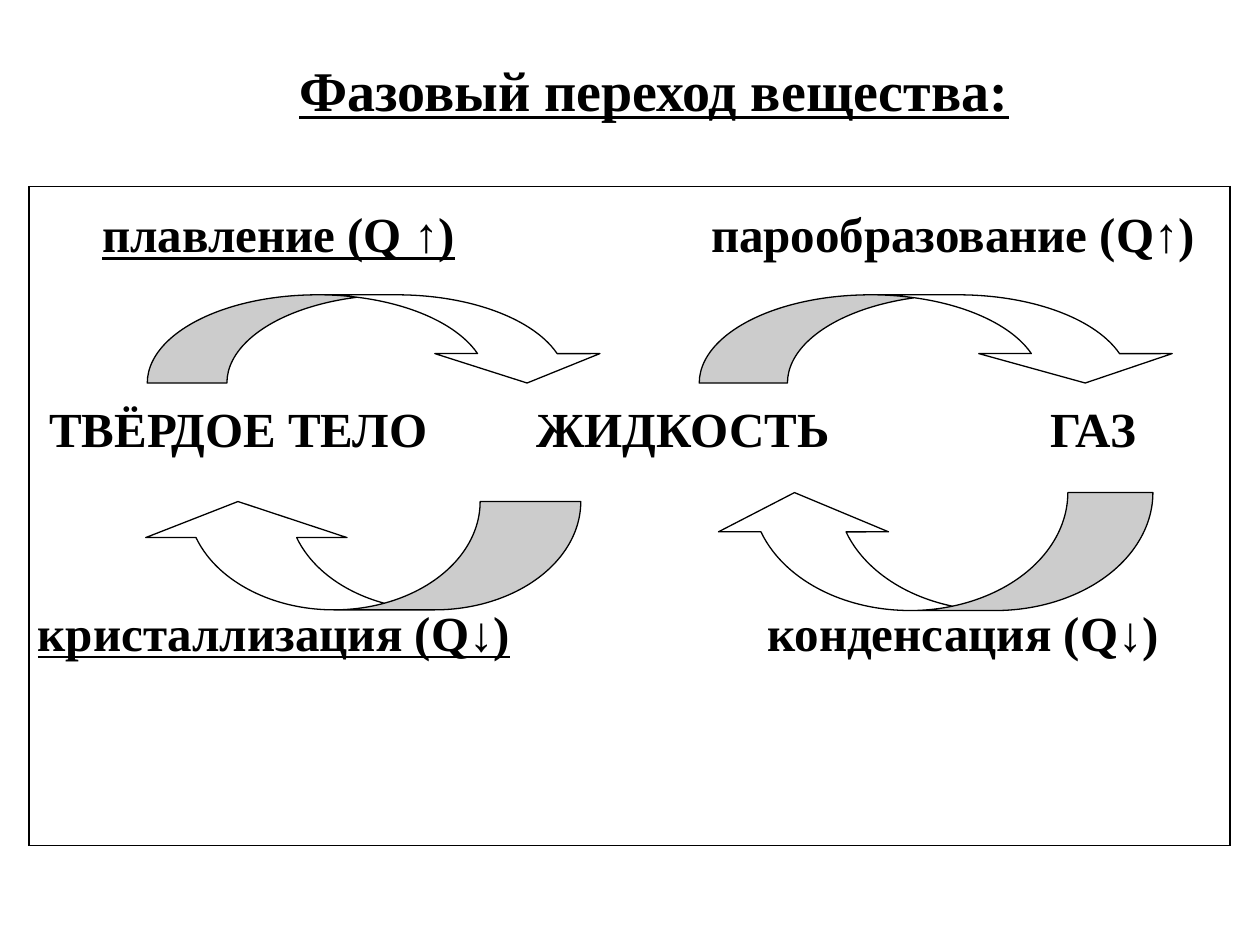
from lxml.etree import SubElement
from pptx import Presentation
from pptx.dml.color import RGBColor
from pptx.enum.shapes import MSO_SHAPE
from pptx.enum.text import MSO_AUTO_SIZE, PP_ALIGN
from pptx.oxml import parse_xml
from pptx.oxml.ns import nsdecls, qn
from pptx.util import Pt

COLOURS = {"ink": "000000", "paper": "FFFFFF"}
HEADING = {"name": "Times New Roman", "size": Pt(32), "bold": True, "underline": True}
LABEL = {"name": "Times New Roman", "size": Pt(28), "bold": True, "underline": False}
UNDERLINED = {**LABEL, "underline": True}

TITLE = "Фазовый переход вещества:"
TITLE_PLACE = (106.5, 28, 534.5, 46)
FRAME_PLACE = (16.6, 106.6, 686.2, 376.6)
FRAME_MARGINS = {"margin_left": Pt(5), "margin_right": Pt(5),
                 "margin_top": Pt(13), "margin_bottom": Pt(0)}

# gap above the row, then (distance from the left margin, words, format)
ROWS = [
    (0, [(36.8, "плавление (Q ↑)", UNDERLINED), (384.7, "парообразование (Q↑)", LABEL)]),
    (80.3, [(6.5, "ТВЁРДОЕ ТЕЛО", LABEL), (284.7, "ЖИДКОСТЬ", LABEL), (578.5, "ГАЗ", LABEL)]),
    (85.6, [(0, "кристаллизация (Q↓)", UNDERLINED), (416.7, "конденсация (Q↓)", LABEL)]),
]

# kind, place, adjustments, mirrored
DOWN, UP = MSO_SHAPE.CURVED_DOWN_ARROW, MSO_SHAPE.CURVED_UP_ARROW
ARROWS = [
    (DOWN, (84.2, 168.5, 264.2, 50.4), (0.903, 1.871, 0.333), False),
    (DOWN, (399.6, 168.5, 275.8, 50.4), (1.096, 2.192, 0.333), False),
    (UP, (78.5, 286.6, 253.4, 61.9), (0.929, 1.858, 0.333), True),
    (UP, (405.4, 281.5, 253.4, 67.4), (0.721, 1.442, 0.333), True),
]


def points(place):
    return [Pt(value) for value in place]


def colour(name):
    return RGBColor.from_string(COLOURS[name])


def add_span(para, words, style):
    span = para.add_run()
    span.text = words
    for key, value in style.items():
        setattr(span.font, key, value)
    span.font.color.rgb = colour("ink")


def add_row(para, gap, entries):
    """Write the entries of a row, each starting at its own tab stop."""
    para.space_before = Pt(gap)
    stops = SubElement(para._p.get_or_add_pPr(), qn("a:tabLst"))
    for offset, words, style in entries:
        if offset:
            SubElement(stops, qn("a:tab"), pos=str(int(Pt(offset))), algn="l")
            add_span(para, "\t", LABEL)
        add_span(para, words, style)


def add_frame(page):
    """Add the one-cell table that holds the names of states and transitions."""
    table = page.shapes.add_table(1, 1, *points(FRAME_PLACE)).table
    table.first_row = table.horz_banding = False
    cell = table.cell(0, 0)
    for key, value in FRAME_MARGINS.items():
        setattr(cell, key, value)
    cell.fill.background()
    properties = cell._tc.get_or_add_tcPr()
    for index, side in enumerate("LRTB"):
        properties.insert(index, parse_xml(
            f'<a:ln{side} {nsdecls("a")} w="{int(Pt(1))}"><a:solidFill>'
            f'<a:srgbClr val="{COLOURS["ink"]}"/></a:solidFill></a:ln{side}>'))
    frame = cell.text_frame
    for index, (gap, entries) in enumerate(ROWS):
        para = frame.add_paragraph() if index else frame.paragraphs[0]
        add_row(para, gap, entries)


def add_arrow(page, kind, place, adjustments, mirrored):
    arrow = page.shapes.add_shape(kind, *points(place))
    arrow.shadow.inherit = False
    for index, value in enumerate(adjustments):
        arrow.adjustments[index] = value
    arrow.fill.solid()
    arrow.fill.fore_color.rgb = colour("paper")
    arrow.line.color.rgb = colour("ink")
    arrow.line.width = Pt(0.75)
    if mirrored:
        arrow._element.spPr.find(qn("a:xfrm")).set("flipH", "1")


def add_title(page):
    box = page.shapes.add_textbox(*points(TITLE_PLACE))
    box.text_frame.word_wrap = True
    box.text_frame.auto_size = MSO_AUTO_SIZE.SHAPE_TO_FIT_TEXT
    para = box.text_frame.paragraphs[0]
    para.alignment = PP_ALIGN.CENTER
    add_span(para, TITLE, HEADING)


def main():
    deck = Presentation()
    deck.slide_width, deck.slide_height = Pt(720), Pt(540)
    page = deck.slides.add_slide(deck.slide_layouts[6])
    add_frame(page)
    for arrow in ARROWS:
        add_arrow(page, *arrow)
    add_title(page)
    deck.save("out.pptx")


if __name__ == "__main__":
    main()
